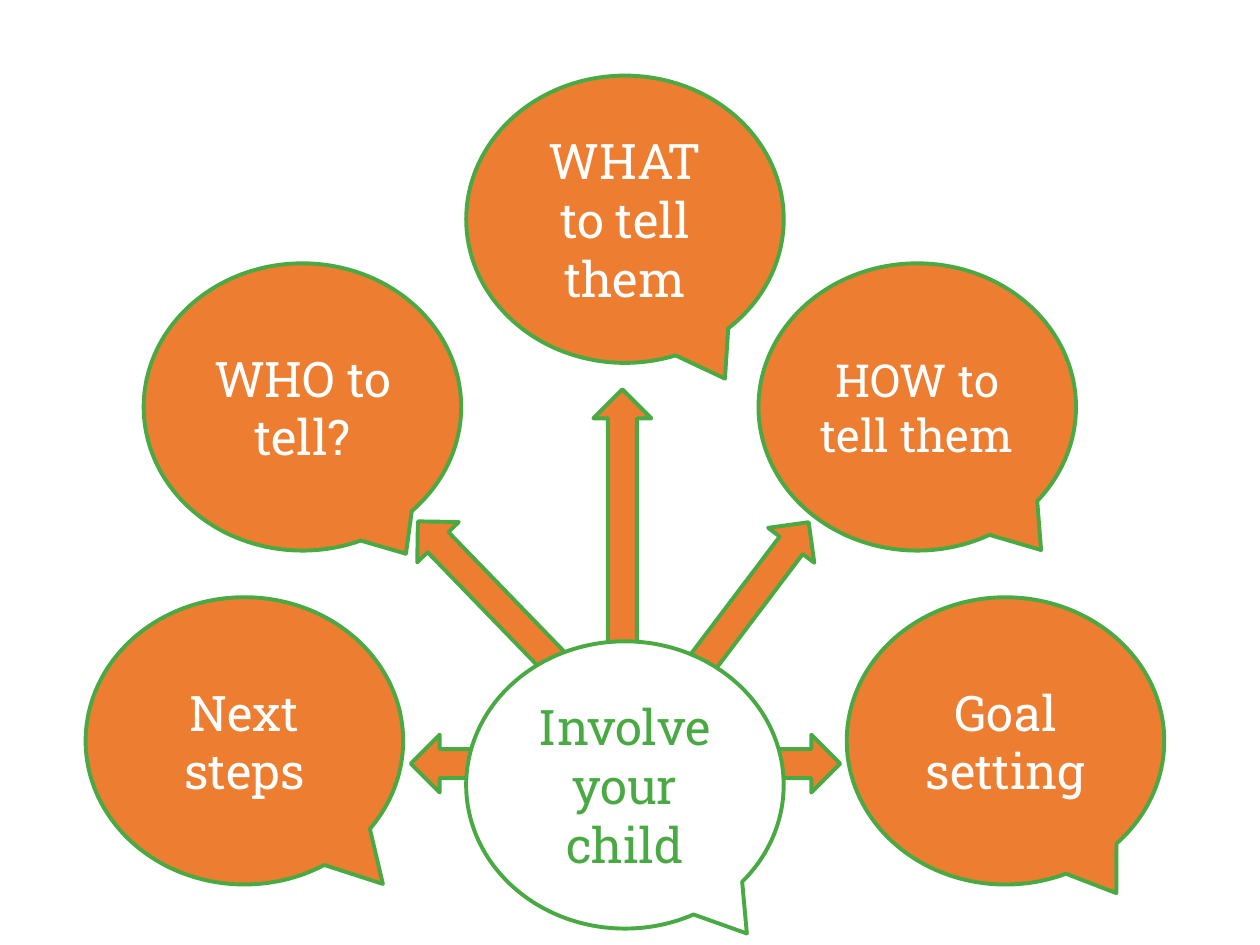
import pptx
import pptx.dml.color
import pptx.enum.shapes
import pptx.enum.text
import pptx.util

Pt = pptx.util.Pt
MSO_SHAPE = pptx.enum.shapes.MSO_SHAPE

ORANGE = "ED7D31"
GREEN = "49AA43"
WHITE = "FFFFFF"
FONT = "Roboto Slab"
BUBBLE_W, BUBBLE_H = 181.44, 164.16
ARROW_W = 33.1

BUBBLES = [
    ("Next steps", 48.96, 341.28, (0.436, 0.498), 28),
    ("WHO to tell?", 82.08, 150.48, (0.326, 0.511), 28),
    ("HOW to tell them", 433.44, 150.48, (0.39, 0.498), 26),
    ("WHAT to tell them", 266.4, 43.2, (0.315, 0.555), 28),
    ("Goal setting", 483.84, 341.28, (0.349, 0.53), 28),
]
ARROWS = [
    (238.3, 416.2, 40.3, 90),
    (262.8, 281.5, 116.6, 135.9),
    (440.6, 413.3, 46.1, 270),
    (410.4, 286.6, 116.6, 217.1),
    (339.1, 222.5, 155.5, 180),
]


def rgb(value):
    return pptx.dml.color.RGBColor.from_string(value)


def add_outlined(s, kind, left, top, width, height, fill=ORANGE):
    sp = s.shapes.add_shape(kind, Pt(left), Pt(top), Pt(width), Pt(height))
    sp.shadow.inherit = False
    sp.fill.solid()
    sp.fill.fore_color.rgb = rgb(fill)
    sp.line.color.rgb = rgb(GREEN)
    sp.line.width = Pt(2.25)
    return sp


def set_text(sp, text, size=28, color=WHITE, font=FONT):
    tf = sp.text_frame
    tf.word_wrap = True
    tf.vertical_anchor = pptx.enum.text.MSO_ANCHOR.MIDDLE
    p = tf.paragraphs[0]
    p.alignment = pptx.enum.text.PP_ALIGN.CENTER
    r = p.add_run()
    r.text = text
    r.font.size = Pt(size)
    r.font.name = font
    r.font.color.rgb = rgb(color)


def add_bubble(s, text, left, top, tail, size=28, fill=ORANGE, color=WHITE):
    sp = add_outlined(s, MSO_SHAPE.OVAL_CALLOUT, left, top, BUBBLE_W, BUBBLE_H, fill)
    sp.adjustments[0], sp.adjustments[1] = tail
    set_text(sp, text, size=size, color=color)


def add_arrow(s, left, top, length, angle):
    sp = add_outlined(s, MSO_SHAPE.DOWN_ARROW, left, top, ARROW_W, length)
    sp.rotation = angle


def main():
    prs = pptx.Presentation()
    prs.slide_width, prs.slide_height = Pt(720), Pt(540)
    s = prs.slides.add_slide(prs.slide_layouts[6])
    for bubble in BUBBLES:
        add_bubble(s, *bubble)
    for arrow in ARROWS:
        add_arrow(s, *arrow)
    add_bubble(s, "Involve your child", 266.4, 366.48, (0.384, 0.517),
               fill=WHITE, color=GREEN)
    prs.save("out.pptx")


if __name__ == "__main__":
    main()
